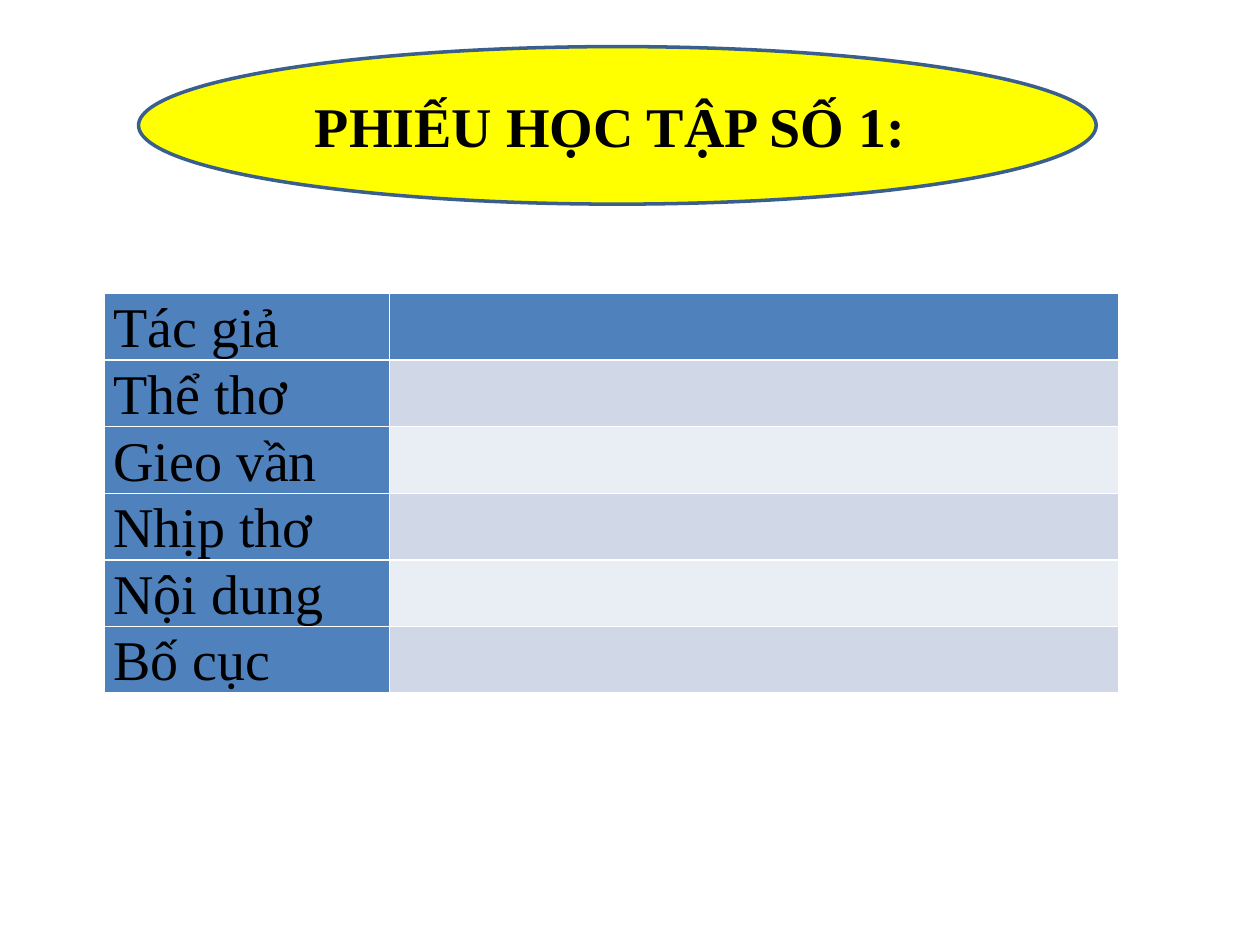
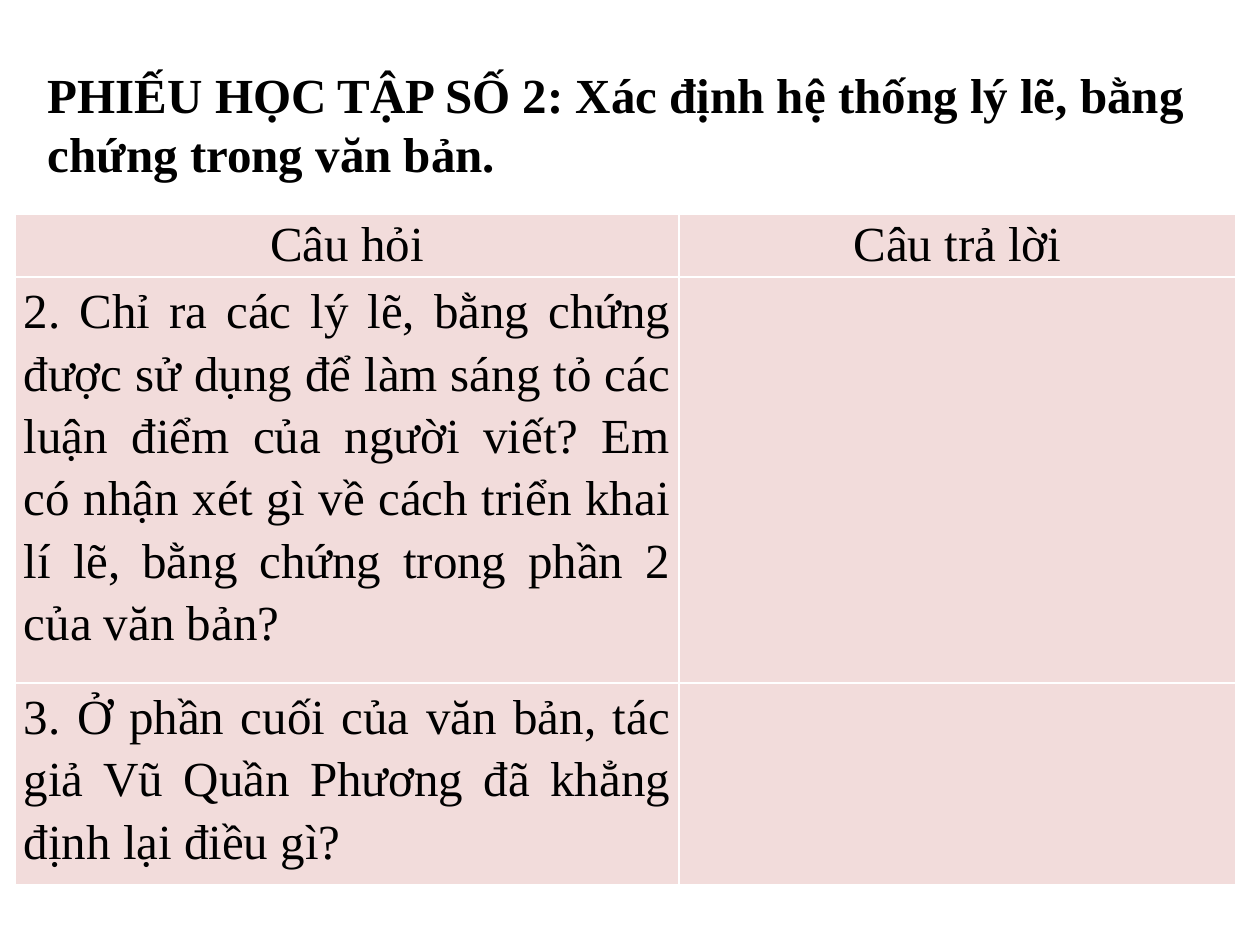
from pptx import Presentation
from pptx.dml.color import RGBColor
from pptx.enum.shapes import MSO_SHAPE
from pptx.enum.text import MSO_ANCHOR, MSO_AUTO_SIZE, PP_ALIGN
from pptx.util import Inches, Pt

FONT = "Times New Roman"
COLORS = {
    "text": "000000",
    "label": "4F81BD",
    "band_dark": "D0D8E8",
    "band_light": "E9EDF4",
    "question": "F2DCDB",
    "banner": "FFFF00",
    "banner_line": "3A5F8C",
}


def write(frame, text, size=28, bold=False, align=PP_ALIGN.LEFT, spacing=1.0):
    paragraph = frame.paragraphs[0]
    paragraph.alignment = align
    paragraph.line_spacing = spacing
    run = paragraph.add_run()
    run.text = text
    run.font.name = FONT
    run.font.size = Pt(size)
    run.font.bold = bold
    run.font.color.rgb = RGBColor.from_string(COLORS["text"])


def fill_cell(cell, color, text="", **text_format):
    cell.fill.solid()
    cell.fill.fore_color.rgb = RGBColor.from_string(COLORS[color])
    if text:
        cell.margin_left = cell.margin_right = Inches(0.07)
        cell.margin_top = cell.margin_bottom = 0
        write(cell.text_frame, text, **text_format)


prs = Presentation()
prs.slide_width, prs.slide_height = Inches(10), Inches(7.5)
title_only, blank = prs.slide_layouts[5], prs.slide_layouts[6]

# Worksheet 1: facts about the poem
poem_slide = prs.slides.add_slide(blank)
poem_labels = ["Tác giả", "Thể thơ", "Gieo vần", "Nhịp thơ", "Nội dung", "Bố cục"]
poem_table = poem_slide.shapes.add_table(
    len(poem_labels), 2, Inches(0.83), Inches(2.33), Inches(8.05), Inches(3.17)
).table
poem_table.columns[0].width = Inches(2.26)
poem_table.columns[1].width = Inches(5.79)
for row, label in enumerate(poem_labels):
    fill_cell(poem_table.cell(row, 0), "label", label,
              size=32, align=PP_ALIGN.JUSTIFY, spacing=1.07)
    band = "label" if row == 0 else "band_dark" if row % 2 else "band_light"
    fill_cell(poem_table.cell(row, 1), band)

banner = poem_slide.shapes.add_shape(
    MSO_SHAPE.OVAL, Inches(1.1), Inches(0.37), Inches(7.6), Inches(1.25)
)
banner.shadow.inherit = False
banner.fill.solid()
banner.fill.fore_color.rgb = RGBColor.from_string(COLORS["banner"])
banner.line.color.rgb = RGBColor.from_string(COLORS["banner_line"])
banner.line.width = Pt(2)
banner.text_frame.vertical_anchor = MSO_ANCHOR.MIDDLE
write(banner.text_frame, "PHIẾU HỌC TẬP SỐ 1: ", size=32, bold=True,
      align=PP_ALIGN.CENTER)

# Worksheet 2: arguments and evidence
argument_slide = prs.slides.add_slide(title_only)
heading = argument_slide.shapes.title
heading.left, heading.top = Inches(0.28), Inches(0.46)
heading.width, heading.height = Inches(10.1), Inches(1.51)
heading.text_frame.word_wrap = True
heading.text_frame.auto_size = MSO_AUTO_SIZE.NONE
heading.text_frame.vertical_anchor = MSO_ANCHOR.TOP
write(heading.text_frame,
      "PHIẾU HỌC TẬP SỐ 2: Xác định hệ thống lý lẽ, bằng chứng trong văn bản.",
      bold=True)

questions = [
    "2. Chỉ ra các lý lẽ, bằng chứng được sử dụng để làm sáng tỏ các luận điểm "
    "của người viết? Em có nhận xét gì về cách triển khai lí lẽ, bằng chứng "
    "trong phần 2 của văn bản?",
    "3. Ở phần cuối của văn bản, tác giả Vũ Quần Phương đã khẳng định lại điều gì?",
]
question_table = argument_slide.shapes.add_table(
    len(questions) + 1, 2, Inches(0.12), Inches(1.7), Inches(9.69), Inches(5.32)
).table
for column, width in zip(question_table.columns, (5.27, 4.42)):
    column.width = Inches(width)
for row, height in zip(question_table.rows, (0.5, 3.22, 1.6)):
    row.height = Inches(height)
for column, header in enumerate(["Câu hỏi", "Câu trả lời"]):
    fill_cell(question_table.cell(0, column), "question", header,
              align=PP_ALIGN.CENTER, spacing=1.07)
for row, question in enumerate(questions, start=1):
    fill_cell(question_table.cell(row, 0), "question", question,
              align=PP_ALIGN.JUSTIFY, spacing=1.15)
    fill_cell(question_table.cell(row, 1), "question")

prs.save("out.pptx")
